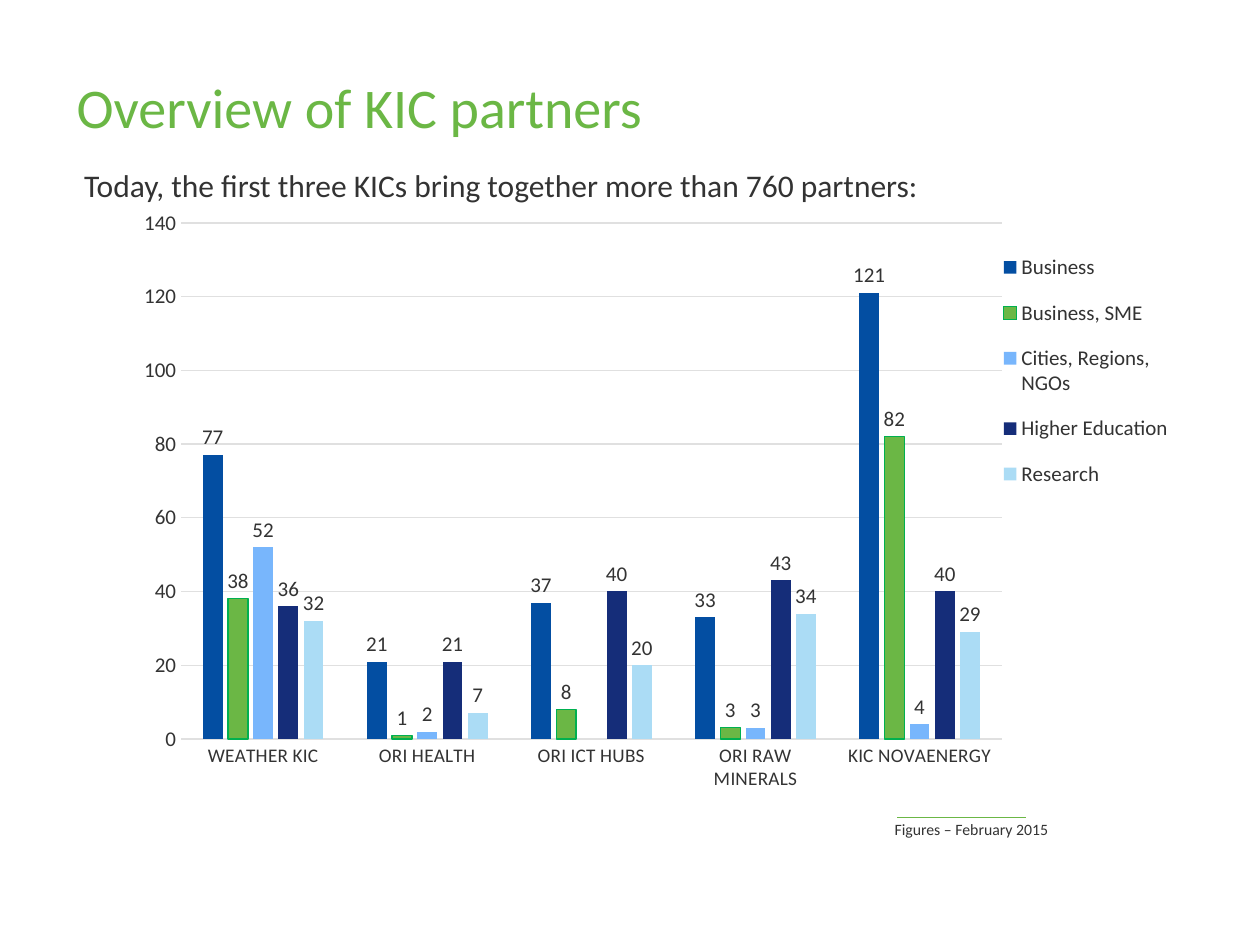
"""Build the slide with the overview of KIC partners."""
from dataclasses import dataclass
from typing import Optional

from lxml import etree
from pptx import Presentation
from pptx.chart.chart import Chart
from pptx.chart.data import CategoryChartData
from pptx.dml.color import RGBColor
from pptx.enum.chart import XL_CHART_TYPE, XL_LABEL_POSITION, XL_LEGEND_POSITION, XL_TICK_MARK
from pptx.enum.shapes import MSO_CONNECTOR
from pptx.enum.text import MSO_ANCHOR
from pptx.oxml.ns import qn
from pptx.slide import Slide
from pptx.util import Inches, Pt

CLUSTERED = XL_CHART_TYPE.COLUMN_CLUSTERED
OUTSIDE_END = XL_LABEL_POSITION.OUTSIDE_END
LEGEND_RIGHT = XL_LEGEND_POSITION.RIGHT
NO_TICK = XL_TICK_MARK.NONE
STRAIGHT = MSO_CONNECTOR.STRAIGHT
TOP, BOTTOM = MSO_ANCHOR.TOP, MSO_ANCHOR.BOTTOM


@dataclass(frozen=True)
class Theme:
    font: str = "Calibri"
    text: str = "333333"
    accent: str = "6BB745"
    grid: str = "E0E0E0"
    title_size: float = 32
    lead_size: float = 18
    chart_size: float = 12
    category_size: float = 11
    note_size: float = 9
    hairline: float = 0.5
    thin_line: float = 0.75


@dataclass(frozen=True)
class Caption:
    text: str
    box: tuple[float, float, float, float]
    size: float
    color: str
    anchor: MSO_ANCHOR = TOP
    line_spacing: float = 1.0
    inset: bool = True


@dataclass(frozen=True)
class PartnerType:
    name: str
    counts: tuple[Optional[int], ...]
    color: str
    outline: Optional[str] = None


THEME = Theme()
CAPTIONS = (
    Caption("Today, the first three KICs bring together more than 760 partners:",
            (0.57, 1.27, 8.9, 0.4), THEME.lead_size, THEME.text),
    Caption("Overview of KIC partners", (0.51, 0.59, 9.37, 0.56),
            THEME.title_size, THEME.accent, line_spacing=0.9),
    Caption("Figures – February 2015", (7.1, 6.51, 1.69, 0.15),
            THEME.note_size, THEME.text, BOTTOM, inset=False),
)
COMMUNITIES = ("WEATHER KIC", "ORI HEALTH", "ORI ICT HUBS", "ORI RAW MINERALS", "KIC NOVAENERGY")
PARTNER_TYPES = (
    PartnerType("Business", (77, 21, 37, 33, 121), "034EA2"),
    PartnerType("Business, SME", (38, 1, 8, 3, 82), THEME.accent, "00B050"),
    PartnerType("Cities, Regions, NGOs", (52, 2, None, 3, 4), "78B6FC"),
    PartnerType("Higher Education", (36, 21, 40, 43, 40), "152D79"),
    PartnerType("Research", (32, 7, 20, 34, 29), "ABDCF5"),
)
CHART_BOX = (1.02, 1.67, 8.35, 4.61)
PLOT_LAYOUT = (0.05, 0.02, 0.78, 0.89)
LEGEND_LAYOUT = (0.82, 0.04, 0.18, 0.47)


def rgb(color: str) -> RGBColor:
    """Turn a hex string into a colour."""
    return RGBColor.from_string(color)


def style_font(font, size: float, color: str) -> None:
    """Set the theme font with a size and colour."""
    font.name, font.size = THEME.font, Pt(size)
    font.color.rgb = rgb(color)


def style_line(line, color: str, width: float) -> None:
    """Set the colour and width of a line."""
    line.color.rgb = rgb(color)
    line.width = Pt(width)


def add_caption(slide: Slide, caption: Caption) -> None:
    """Add one line of text."""
    frame = slide.shapes.add_textbox(*map(Inches, caption.box)).text_frame
    frame.word_wrap = True
    frame.vertical_anchor = caption.anchor
    if not caption.inset:
        frame.margin_left = frame.margin_right = frame.margin_top = frame.margin_bottom = 0
    frame.text = caption.text
    paragraph = frame.paragraphs[0]
    paragraph.line_spacing = caption.line_spacing
    style_font(paragraph.runs[0].font, caption.size, caption.color)


def add_rule(slide: Slide, left: float, right: float, top: float) -> None:
    """Add the thin rule above the note."""
    rule = slide.shapes.add_connector(STRAIGHT, *map(Inches, (left, top, right, top)))
    style_line(rule.line, THEME.accent, THEME.hairline)
    etree.SubElement(rule._element.spPr, qn("a:effectLst"))


def place_part(part, successors: tuple[str, ...], fractions: tuple[float, ...],
               inner: bool = False) -> None:
    """Give a chart part a manual layout as fractions of the chart."""
    for old in part.findall(qn("c:layout")):
        part.remove(old)
    layout = etree.Element(qn("c:layout"))
    manual = etree.SubElement(layout, qn("c:manualLayout"))
    settings = [("layoutTarget", "inner")] if inner else []
    settings += [("xMode", "edge"), ("yMode", "edge"), *zip("xywh", map(str, fractions))]
    for tag, value in settings:
        etree.SubElement(manual, qn(f"c:{tag}")).set("val", value)
    next(part.iterchildren(*map(qn, successors))).addprevious(layout)


def style_axes(chart: Chart) -> None:
    """Style the two axes and the gridlines."""
    categories, values = chart.category_axis, chart.value_axis
    for axis in (categories, values):
        axis.major_tick_mark = axis.minor_tick_mark = NO_TICK
    style_font(categories.tick_labels.font, THEME.category_size, THEME.text)
    style_line(categories.format.line, THEME.grid, THEME.thin_line)
    values.minimum_scale, values.maximum_scale, values.major_unit = 0, 140, 20
    values.format.line.fill.background()
    style_line(values.major_gridlines.format.line, THEME.grid, THEME.thin_line)


def add_partner_chart(slide: Slide) -> None:
    """Add the chart of partners by community and type."""
    data = CategoryChartData()
    data.categories = COMMUNITIES
    for partner_type in PARTNER_TYPES:
        data.add_series(partner_type.name, partner_type.counts)
    chart = slide.shapes.add_chart(CLUSTERED, *map(Inches, CHART_BOX), data).chart
    style_font(chart.font, THEME.chart_size, THEME.text)
    chart.has_title = False
    style_axes(chart)

    plot = chart.plots[0]
    plot.gap_width, plot.overlap, plot.vary_by_categories = 219, -27, False
    for series, partner_type in zip(plot.series, PARTNER_TYPES):
        series.format.fill.solid()
        series.format.fill.fore_color.rgb = rgb(partner_type.color)
        if partner_type.outline:
            style_line(series.format.line, partner_type.outline, THEME.thin_line)
        series.data_labels.show_value = True
        series.data_labels.position = OUTSIDE_END

    chart.has_legend = True
    chart.legend.position = LEGEND_RIGHT
    chart.legend.include_in_layout = False
    place_part(chart.legend._element, ("c:overlay",), LEGEND_LAYOUT)
    place_part(chart._chartSpace.chart.plotArea, ("c:barChart",), PLOT_LAYOUT, inner=True)


def main() -> None:
    """Build and save the slide."""
    presentation = Presentation()
    presentation.slide_width, presentation.slide_height = Inches(10), Inches(7.5)
    slide = presentation.slides.add_slide(presentation.slide_layouts[6])
    for caption in CAPTIONS:
        add_caption(slide, caption)
    add_rule(slide, 7.12, 8.14, 6.49)
    add_partner_chart(slide)
    presentation.save("out.pptx")


if __name__ == "__main__":
    main()
